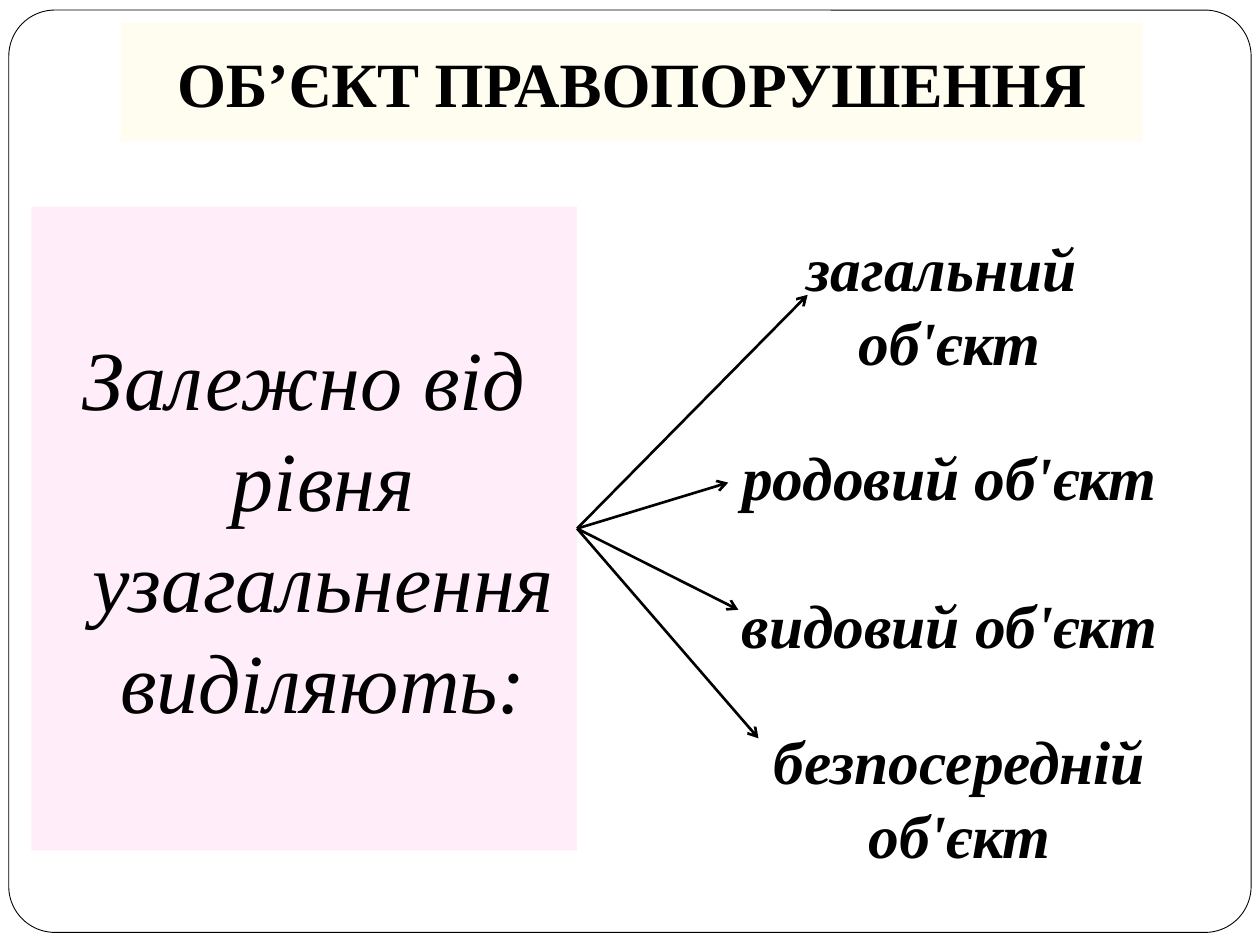
"""Build a slide on the levels of the object of an offence."""
from lxml import etree
from pptx import Presentation
from pptx.dml.color import RGBColor
from pptx.enum.shapes import MSO_CONNECTOR, MSO_SHAPE
from pptx.enum.text import MSO_ANCHOR, PP_ALIGN
from pptx.oxml.ns import qn
from pptx.util import Inches, Pt

RECT, ROUND = MSO_SHAPE.RECTANGLE, MSO_SHAPE.ROUNDED_RECTANGLE
LINE = MSO_CONNECTOR.STRAIGHT
MIDDLE, CENTER = MSO_ANCHOR.MIDDLE, PP_ALIGN.CENTER
RIGHT = 3

FONT = "Times New Roman"
COLORS = {"ink": "000000", "paper": "FFFFFF", "title": "FFFDF0", "level": "FFEEF9"}
FRAME = (0.07, 0.08, 9.86, 7.32)
TITLE = ("ОБ’ЄКТ ПРАВОПОРУШЕННЯ", (0.96, 0.18, 8.11, 0.94))
LEVEL = ("Залежно від рівня узагальнення виділяють:", (0.25, 1.64, 4.33, 5.11))
KINDS = [
    (["загальний ", "об'єкт"], (5.7, 1.8, 3.67, 1.23), (6.41, 2.34)),
    (["родовий об'єкт"], (5.7, 3.36, 3.67, 0.84), (5.78, 3.83)),
    (["видовий об'єкт"], (5.7, 4.53, 3.67, 0.84), (5.86, 4.84)),
    (["безпосередній об'єкт"], (5.78, 5.7, 3.67, 1.25), (6.02, 5.86)),
]


def color(name):
    return RGBColor.from_string(COLORS[name])


def add_box(slide, kind, area, fill):
    box = slide.shapes.add_shape(kind, *map(Inches, area))
    box.shadow.inherit = False
    box.fill.solid()
    box.fill.fore_color.rgb = color(fill)
    box.line.fill.background()
    return box


def write(shape, lines, size, bold=False, italic=False):
    frame = shape.text_frame
    frame.word_wrap = True
    frame.vertical_anchor = MIDDLE
    for i, line in enumerate(lines):
        para = frame.add_paragraph() if i else frame.paragraphs[0]
        para.alignment = CENTER
        run = para.add_run()
        run.text = line
        font = run.font
        font.name, font.size = FONT, Pt(size)
        font.bold, font.italic = bold, italic
        font.color.rgb = color("ink")


def add_arrow(slide, source, end):
    arrow = slide.shapes.add_connector(LINE, 0, 0, *map(Inches, end))
    arrow.begin_connect(source, RIGHT)
    arrow.line.width = Pt(1.5)
    arrow.line.color.rgb = color("ink")
    etree.SubElement(arrow.line._get_or_add_ln(), qn("a:tailEnd"), type="arrow")
    etree.SubElement(arrow._element.spPr, qn("a:effectLst"))


def main():
    deck = Presentation()
    deck.slide_width, deck.slide_height = Inches(10), Inches(7.5)
    slide = deck.slides.add_slide(deck.slide_layouts[6])

    frame = add_box(slide, ROUND, FRAME, "paper")
    frame.adjustments[0] = 0.05
    frame.line.color.rgb = color("ink")
    frame.line.width = Pt(0.5)

    text, area = LEVEL
    level = add_box(slide, RECT, area, "level")
    write(level, [text], 48, italic=True)
    para = level.text_frame.paragraphs[0]
    para.space_before = Pt(5.8)
    props = para._p.get_or_add_pPr()
    props.set("marL", str(Inches(0.3)))
    props.set("indent", str(Inches(-0.3)))

    for lines, area, end in KINDS:
        label = slide.shapes.add_textbox(*map(Inches, area))
        write(label, lines, 35.1, bold=True, italic=True)
        add_arrow(slide, level, end)

    text, area = TITLE
    write(add_box(slide, RECT, area, "title"), [text], 36, bold=True)
    deck.save("out.pptx")


if __name__ == "__main__":
    main()
